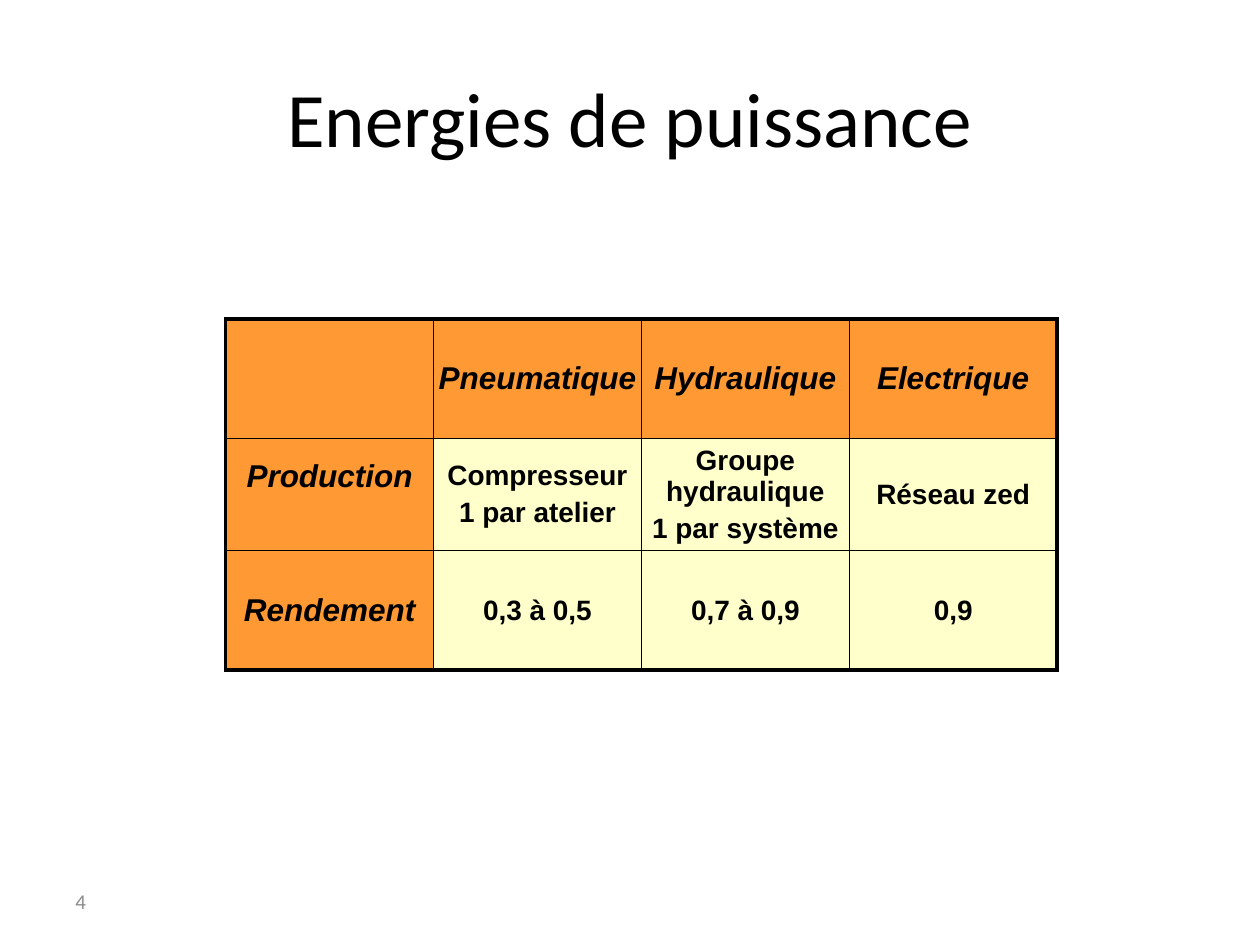
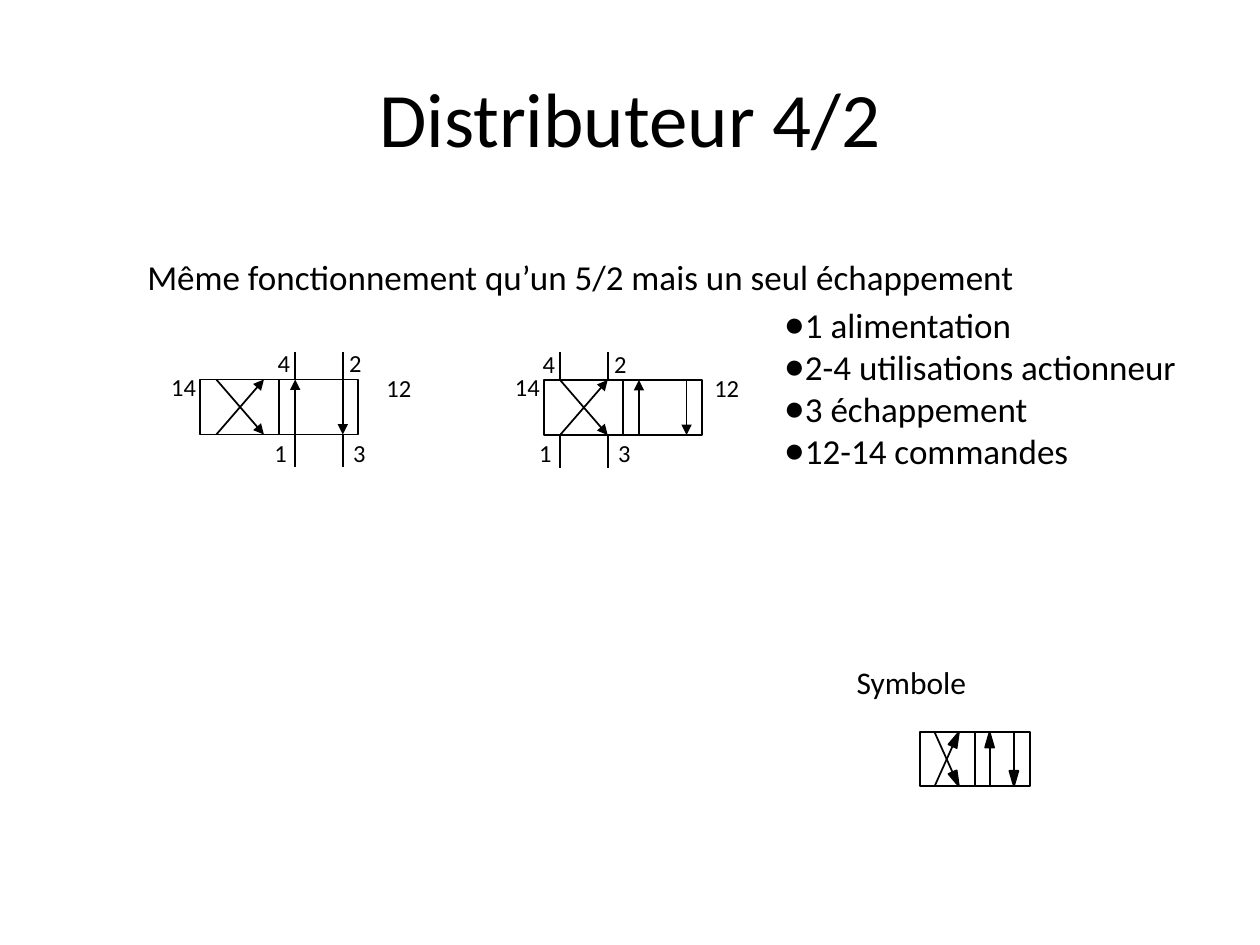
import math

from lxml import etree
from pptx import Presentation
from pptx import util as u
from pptx.dml.color import RGBColor
from pptx.enum import shapes, text
from pptx.oxml.ns import qn

COLOURS = {
    "ink": "000000",
    "paper": "FFFFFF",
    "page_number": "8C8C8C",
    "header_cell": "FF9933",
    "value_cell": "FFFFCC",
}
BODY_FONT = "Calibri"
TABLE_FONT = "Arial"
THIN, THICK = 1, 2.25
BLANK_INSET = (0, 0)
LABEL_INSET = (0.25, 0.13)


def rgb(name):
    return RGBColor.from_string(COLOURS[name])


class Deck:
    def __init__(self):
        self.presentation = Presentation()
        self.presentation.slide_width = u.Cm(25.4)
        self.presentation.slide_height = u.Cm(19.05)
        self.slide = None

    def place(self, shape, left, top, width, height):
        shape.left, shape.top = u.Cm(left), u.Cm(top)
        shape.width, shape.height = u.Cm(width), u.Cm(height)

    def style(self, paragraph, size, colour="ink", font=BODY_FONT):
        paragraph.font.size = u.Pt(size)
        paragraph.font.name = font
        paragraph.font.color.rgb = rgb(colour)

    def inset(self, target, horizontal, vertical):
        target.margin_left = target.margin_right = u.Cm(horizontal)
        target.margin_top = target.margin_bottom = u.Cm(vertical)

    def add_slide(self, layout, title):
        self.slide = self.presentation.slides.add_slide(
            self.presentation.slide_layouts.get_by_name(layout))
        shape = self.slide.shapes.title
        self.place(shape, 1.27, 0.76, 22.86, 3.18)
        shape.text_frame.text = title
        paragraph = shape.text_frame.paragraphs[0]
        paragraph.alignment = text.PP_ALIGN.CENTER
        self.style(paragraph, 44)

    def fill_frame(self, shape, words, size, inset, wrap=True, colour="ink",
                   anchor=text.MSO_ANCHOR.TOP):
        frame = shape.text_frame
        frame.word_wrap = wrap
        frame.vertical_anchor = anchor
        self.inset(frame, *inset)
        frame.text = words
        frame.paragraphs[0].alignment = text.PP_ALIGN.LEFT
        self.style(frame.paragraphs[0], size, colour)

    def text_box(self, words, box, size, inset=BLANK_INSET, **options):
        shape = self.slide.shapes.add_textbox(*map(u.Cm, box))
        self.fill_frame(shape, words, size, inset, **options)

    def label(self, words, left, top):
        width = 0.5 + 0.28 * len(words)
        self.text_box(words, (left, top, width, 0.84), 14, LABEL_INSET, wrap=False)

    def bullets(self, items, box):
        shape = self.slide.placeholders[1]
        self.place(shape, *box)
        frame = shape.text_frame
        frame.auto_size = text.MSO_AUTO_SIZE.NONE
        self.inset(frame, *BLANK_INSET)
        frame.text = "\n".join(items)
        for paragraph in frame.paragraphs:
            self.style(paragraph, 20)
            paragraph.space_before = u.Pt(0)
            properties = paragraph._p.get_or_add_pPr()
            properties.set("marL", "0")
            properties.set("indent", "0")
            etree.SubElement(properties, qn("a:buChar"), char="●")

    def rectangle(self, left, top, width, height, fill=None, line=True):
        shape = self.slide.shapes.add_shape(
            shapes.MSO_SHAPE.RECTANGLE, *map(u.Cm, (left, top, width, height)))
        shape.shadow.inherit = False
        self.paint(shape, fill, line)
        return shape

    def paint(self, shape, fill, line=True):
        if fill:
            shape.fill.solid()
            shape.fill.fore_color.rgb = rgb(fill)
        else:
            shape.fill.background()
        if line:
            shape.line.color.rgb = rgb("ink")
            shape.line.width = u.Pt(THIN)
        else:
            shape.line.fill.background()

    def line(self, start, end, arrow=False):
        connector = self.slide.shapes.add_connector(
            shapes.MSO_CONNECTOR.STRAIGHT, *map(u.Cm, start + end))
        connector.line.color.rgb = rgb("ink")
        connector.line.width = u.Pt(THIN)
        properties = connector._element.spPr
        if arrow:
            etree.SubElement(properties.find(qn("a:ln")), qn("a:tailEnd"), type="triangle")
        etree.SubElement(properties, qn("a:effectLst"))

    def arrow(self, start, end):
        self.line(start, end, arrow=True)

    def long_arrow(self, start, end, length=0.31, half_width=0.09):
        self.line(start, end)
        angle = math.atan2(end[1] - start[1], end[0] - start[0])
        along, across = math.cos(angle), math.sin(angle)
        base = [(end[0] - length * along - side * across,
                 end[1] - length * across + side * along)
                for side in (half_width, -half_width)]
        builder = self.slide.shapes.build_freeform(*map(u.Cm, end))
        builder.add_line_segments([tuple(map(u.Cm, point)) for point in base])
        head = builder.convert_to_shape()
        head.shadow.inherit = False
        self.paint(head, "ink")

    def spool(self, left, top, width, height, ports, draw_arrow):
        self.rectangle(left, top, width, height)
        half, bottom = width / 2, top + height
        self.line((left + half, top), (left + half, bottom))
        first, second = (left + port for port in ports)
        draw_arrow((first, top), (second, bottom))
        draw_arrow((first, bottom), (second, top))
        draw_arrow((first + half, bottom), (first + half, top))
        draw_arrow((second + half, top), (second + half, bottom))

    def valve(self, left, top, active_half, right_label):
        width, height, ports = 3.18, 1.11, (0.32, 1.28)
        self.spool(left, top, width, height, ports, self.arrow)
        bottom = top + height
        first, second = (left + active_half * width / 2 + port for port in ports)
        for port in (first, second):
            self.line((port, top), (port, top - 0.56))
            self.line((port, bottom), (port, bottom + 0.66))
        above, below = top - 0.76, bottom - 0.06
        self.label("4", first - 0.6, above)
        self.label("2", second - 0.12, above)
        self.label("1", first - 0.67, below)
        self.label("3", second - 0.04, below)
        self.label("14", left - 0.84, top - 0.28)
        self.label("12", left + right_label, top - 0.26)

    def border(self, cell, widths):
        properties = cell._tc.get_or_add_tcPr()
        for side, width in zip("LRTB", widths):
            edge = etree.SubElement(properties, qn(f"a:ln{side}"), w=str(u.Pt(width)))
            fill = etree.SubElement(edge, qn("a:solidFill"))
            etree.SubElement(fill, qn("a:srgbClr"), val=COLOURS["ink"])

    def table(self, rows, left, top, column_width, row_heights):
        row_count, column_count = len(rows), len(rows[0])
        table = self.slide.shapes.add_table(
            row_count, column_count, u.Cm(left), u.Cm(top),
            u.Cm(column_width * column_count), u.Cm(sum(row_heights))).table
        for column in table.columns:
            column.width = u.Cm(column_width)
        for row, height in zip(table.rows, row_heights):
            row.height = u.Cm(height)
        for r, row in enumerate(rows):
            for c, words in enumerate(row):
                cell = table.cell(r, c)
                heading = r == 0 or c == 0
                outside = (c == 0, c == column_count - 1, r == 0, r == row_count - 1)
                self.border(cell, [THICK if outer else THIN for outer in outside])
                cell.fill.solid()
                cell.fill.fore_color.rgb = rgb("header_cell" if heading else "value_cell")
                self.inset(cell, *BLANK_INSET)
                cell.vertical_anchor = text.MSO_ANCHOR.MIDDLE
                cell.text = words
                size = 18 if heading else 16
                for paragraph in cell.text_frame.paragraphs:
                    self.style(paragraph, size, font=TABLE_FONT)
                    paragraph.font.bold = True
                    paragraph.font.italic = heading
                    paragraph.alignment = text.PP_ALIGN.CENTER
                    paragraph.space_before = u.Pt(size * 0.2)
        return table


def energy_slide(deck):
    deck.add_slide("Title Only", "Energies de puissance")
    rows = [
        ("", "Pneumatique", "Hydraulique", "Electrique"),
        ("Production", "Compresseur\n1 par atelier",
         "Groupe hydraulique\n1 par système", "Réseau zed"),
        ("Rendement", "0,3 à 0,5", "0,7 à 0,9", "0,9"),
    ]
    table = deck.table(rows, 4.55, 6.43, 4.19, (2.41, 2.26, 2.41))
    table.cell(1, 0).margin_bottom = u.Cm(0.73)
    deck.text_box("4", (1.27, 17.65, 5.92, 1.02), 12, LABEL_INSET,
                  colour="page_number", anchor=text.MSO_ANCHOR.MIDDLE)


def valve_slide(deck):
    deck.add_slide("Title and Content", "Distributeur 4/2")
    symbol_panel = deck.rectangle(17.27, 13.36, 4.75, 3.68, fill="paper", line=False)
    deck.fill_frame(symbol_panel, "Symbole", 18, BLANK_INSET)
    deck.bullets(("1 alimentation", "2-4 utilisations actionneur",
                  "3 échappement", "12-14 commandes"), (15.8, 6.12, 9.6, 5.06))
    deck.valve(4.04, 7.65, active_half=1, right_label=3.5)
    deck.valve(10.97, 7.66, active_half=0, right_label=3.18)
    deck.spool(18.54, 14.76, 2.22, 1.09, (0.3, 0.79), deck.long_arrow)
    deck.text_box("Même fonctionnement qu’un 5/2 mais un seul échappement",
                  (2.97, 5.16, 20.7, 0.84), 20)


def main():
    deck = Deck()
    energy_slide(deck)
    valve_slide(deck)
    deck.presentation.save("out.pptx")


if __name__ == "__main__":
    main()
